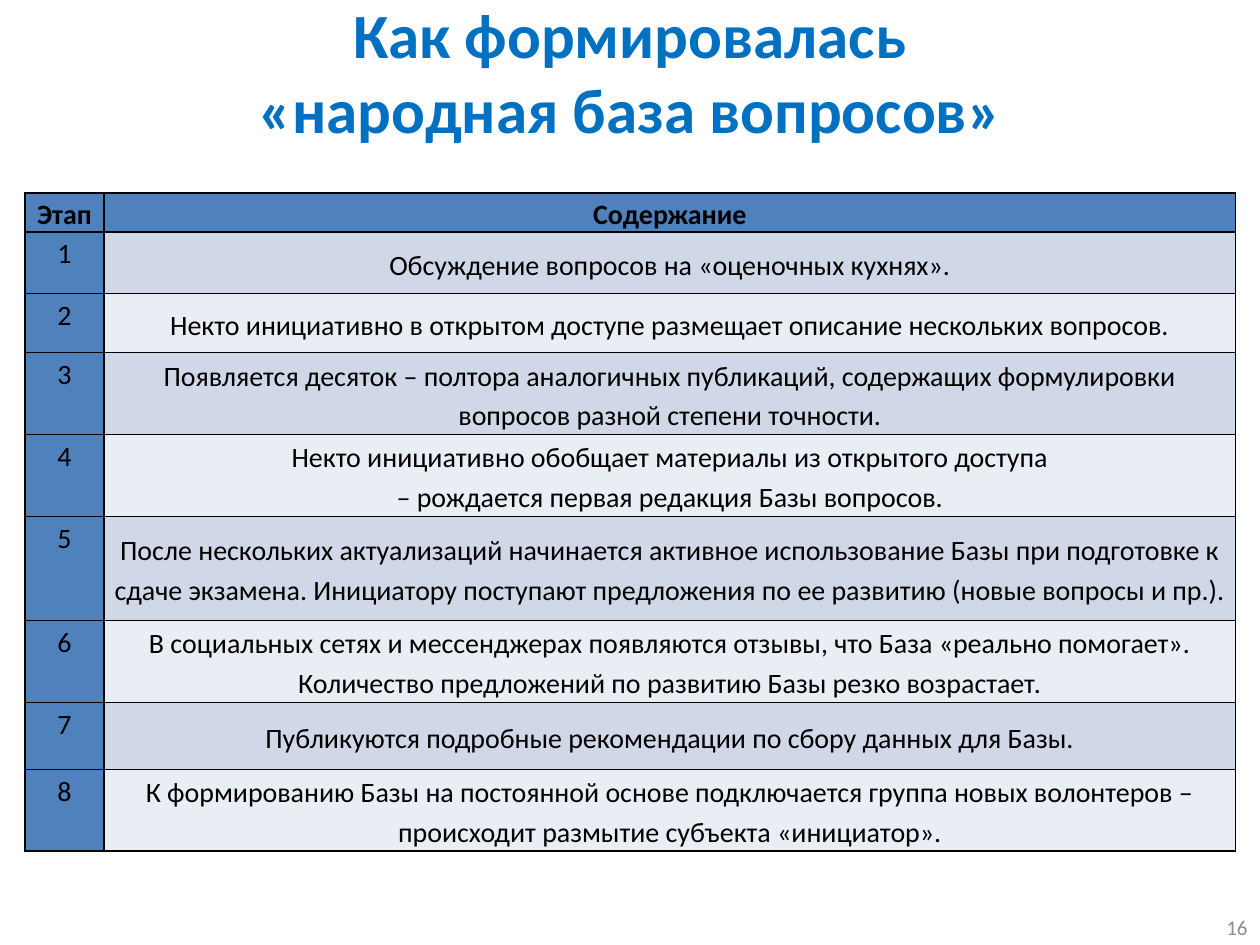
from lxml import etree
from pptx import Presentation
from pptx.dml.color import RGBColor
from pptx.enum import text
from pptx.oxml.ns import qn
from pptx.util import Cm, Pt

TITLE = "Как формировалась\n«народная база вопросов»"
PAGE_NUMBER = "16"
HEADER = ("Этап", "Содержание")
HEADER_HEIGHT = 0.79
# Text of each stage and its row height in cm
STAGES = [
    ("Обсуждение вопросов на «оценочных кухнях».", 1.24),
    ("Некто инициативно в открытом доступе размещает описание нескольких вопросов.", 1.19),
    ("Появляется десяток – полтора аналогичных публикаций, содержащих формулировки "
     "вопросов разной степени точности.", 1.65),
    ("Некто инициативно обобщает материалы из открытого доступа\n"
     "– рождается первая редакция Базы вопросов.", 1.65),
    ("После нескольких актуализаций начинается активное использование Базы при подготовке к "
     "сдаче экзамена. Инициатору поступают предложения по ее развитию "
     "(новые вопросы и пр.).", 2.1),
    ("В социальных сетях и мессенджерах появляются отзывы, что База «реально помогает». "
     "Количество предложений по развитию Базы резко возрастает.", 1.65),
    ("Публикуются подробные рекомендации по сбору данных для Базы.", 1.35),
    ("К формированию Базы на постоянной основе подключается группа новых волонтеров – "
     "происходит размытие субъекта «инициатор».", 1.65),
]
COLUMN_WIDTHS = (1.6, 22.81)

FONT = "Calibri"
BLACK = RGBColor(0x00, 0x00, 0x00)
TITLE_BLUE = RGBColor(0x00, 0x70, 0xC0)
GRAY = RGBColor(0x8C, 0x8C, 0x8C)
HEADER_BLUE = RGBColor(0x4F, 0x81, 0xBD)
BANDS = (RGBColor(0xD0, 0xD8, 0xE8), RGBColor(0xE9, 0xED, 0xF4))


def write(para, words, size, color, bold=False, align=text.PP_ALIGN.CENTER):
    para.text = words
    para.alignment = align
    font = para.font
    font.name, font.size, font.bold = FONT, Pt(size), bold
    font.color.rgb = color


def add_borders(cell):
    props = cell._tc.get_or_add_tcPr()
    for position, side in enumerate(("lnL", "lnR", "lnT", "lnB")):
        line = etree.Element(qn("a:" + side), w=str(Pt(1)))
        fill = etree.SubElement(line, qn("a:solidFill"))
        etree.SubElement(fill, qn("a:srgbClr"), val=str(BLACK))
        props.insert(position, line)


def fill_cell(cell, words, color, anchor, bold):
    cell.margin_left = cell.margin_right = Cm(0.13)
    cell.margin_top = cell.margin_bottom = 0
    cell.vertical_anchor = anchor
    cell.fill.solid()
    cell.fill.fore_color.rgb = color
    para = cell.text_frame.paragraphs[0]
    write(para, words, 16, BLACK, bold)
    para.line_spacing = 1.15
    add_borders(cell)


def add_title(page):
    title = page.shapes.title
    title.left, title.top, title.width, title.height = 0, Cm(0.03), Cm(25.4), Cm(2.8)
    title.text_frame.vertical_anchor = text.MSO_ANCHOR.MIDDLE
    title.text_frame.auto_size = text.MSO_AUTO_SIZE.NONE
    write(title.text_frame.paragraphs[0], TITLE, 36, TITLE_BLUE, bold=True)


def add_stage_table(page):
    rows = [HEADER] + [(str(n), words) for n, (words, _) in enumerate(STAGES, 1)]
    heights = [HEADER_HEIGHT] + [height for _, height in STAGES]
    table = page.shapes.add_table(
        len(rows), len(HEADER), Cm(0.5), Cm(3.89),
        Cm(sum(COLUMN_WIDTHS)), Cm(sum(heights))).table
    for column, width in zip(table.columns, COLUMN_WIDTHS):
        column.width = Cm(width)
    for r, (row, height) in enumerate(zip(rows, heights)):
        table.rows[r].height = Cm(height)
        for c, words in enumerate(row):
            is_content = r > 0 and c > 0
            color = BANDS[(r - 1) % 2] if is_content else HEADER_BLUE
            anchor = text.MSO_ANCHOR.MIDDLE if is_content else text.MSO_ANCHOR.TOP
            fill_cell(table.cell(r, c), words, color, anchor, bold=r == 0)


def add_page_number(page):
    box = page.shapes.add_textbox(Cm(24.3), Cm(18.3), Cm(1.1), Cm(0.8))
    box.text_frame.word_wrap = True
    box.text_frame.vertical_anchor = text.MSO_ANCHOR.MIDDLE
    write(box.text_frame.paragraphs[0], PAGE_NUMBER, 12, GRAY, align=text.PP_ALIGN.RIGHT)


def main():
    deck = Presentation()
    deck.slide_width, deck.slide_height = Cm(25.4), Cm(19.05)
    page = deck.slides.add_slide(deck.slide_layouts[5])
    add_title(page)
    add_page_number(page)
    add_stage_table(page)
    deck.save("out.pptx")


if __name__ == "__main__":
    main()
